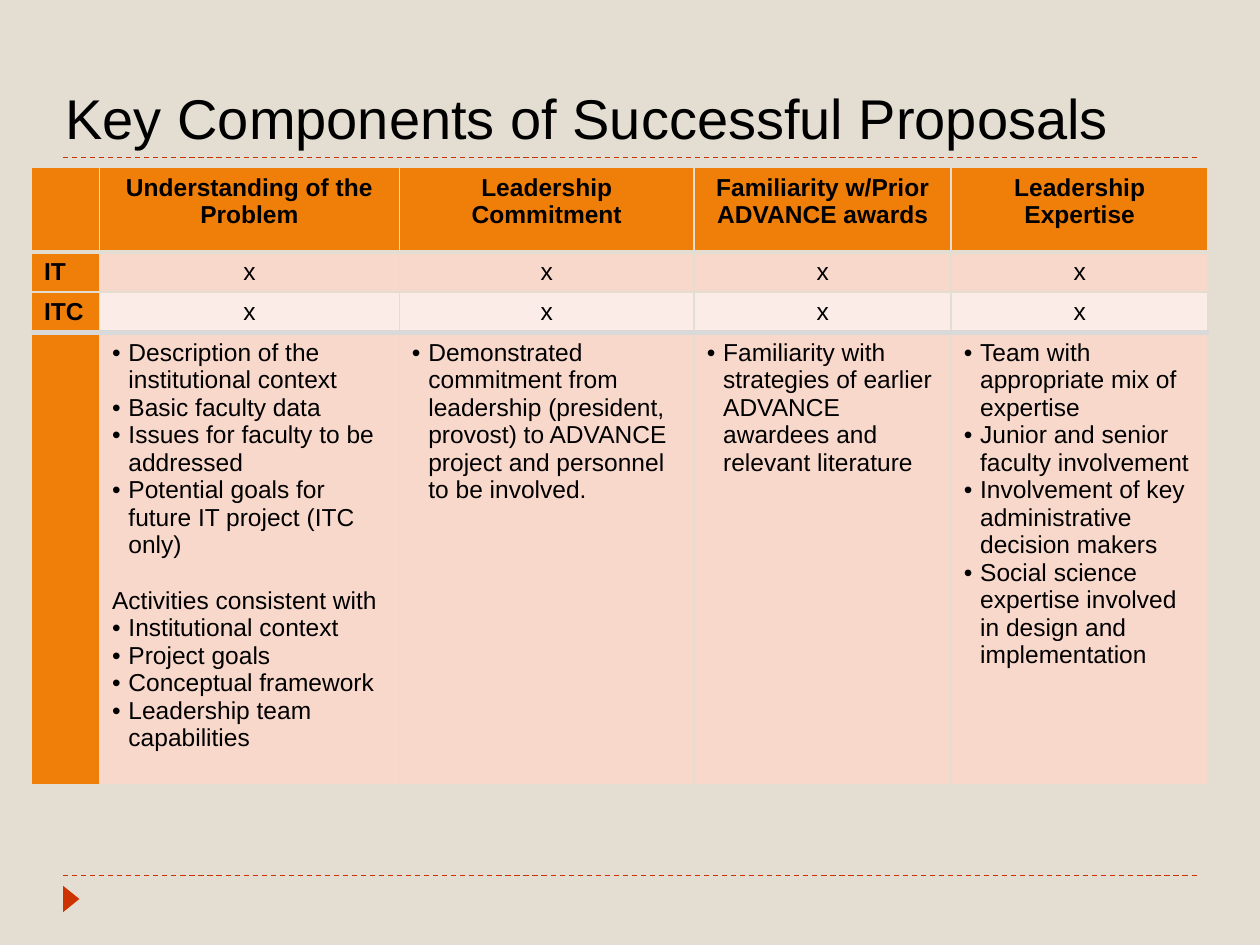
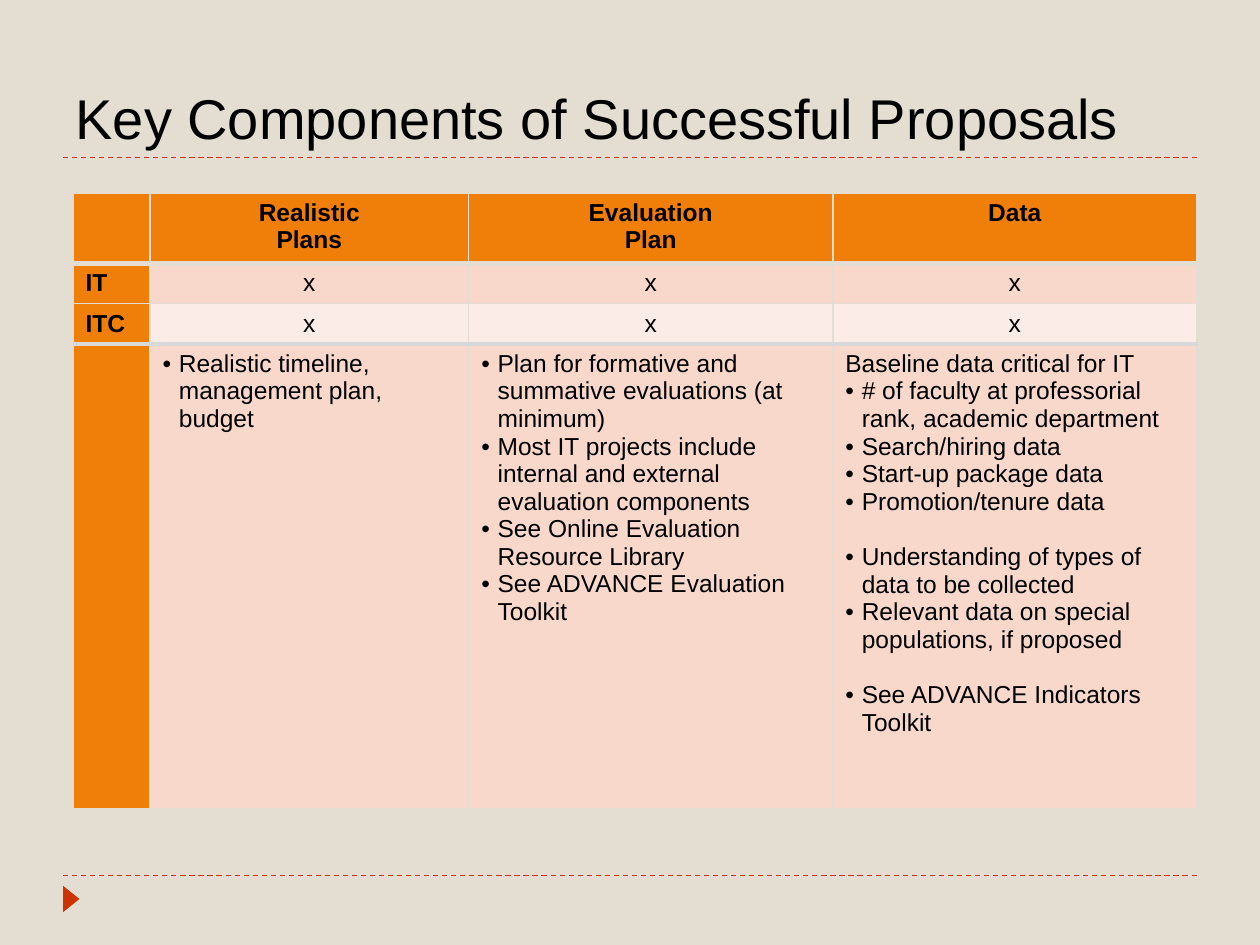
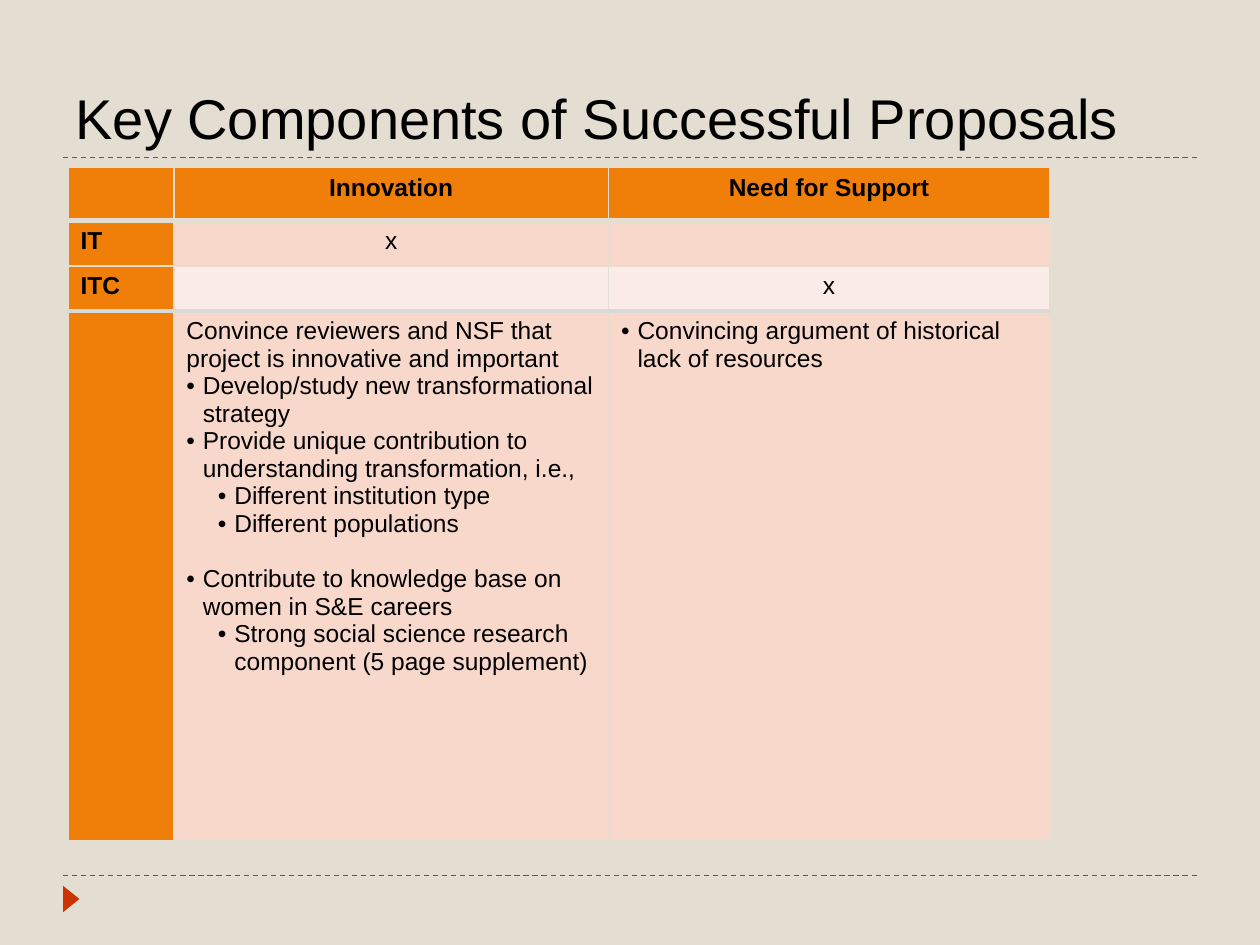
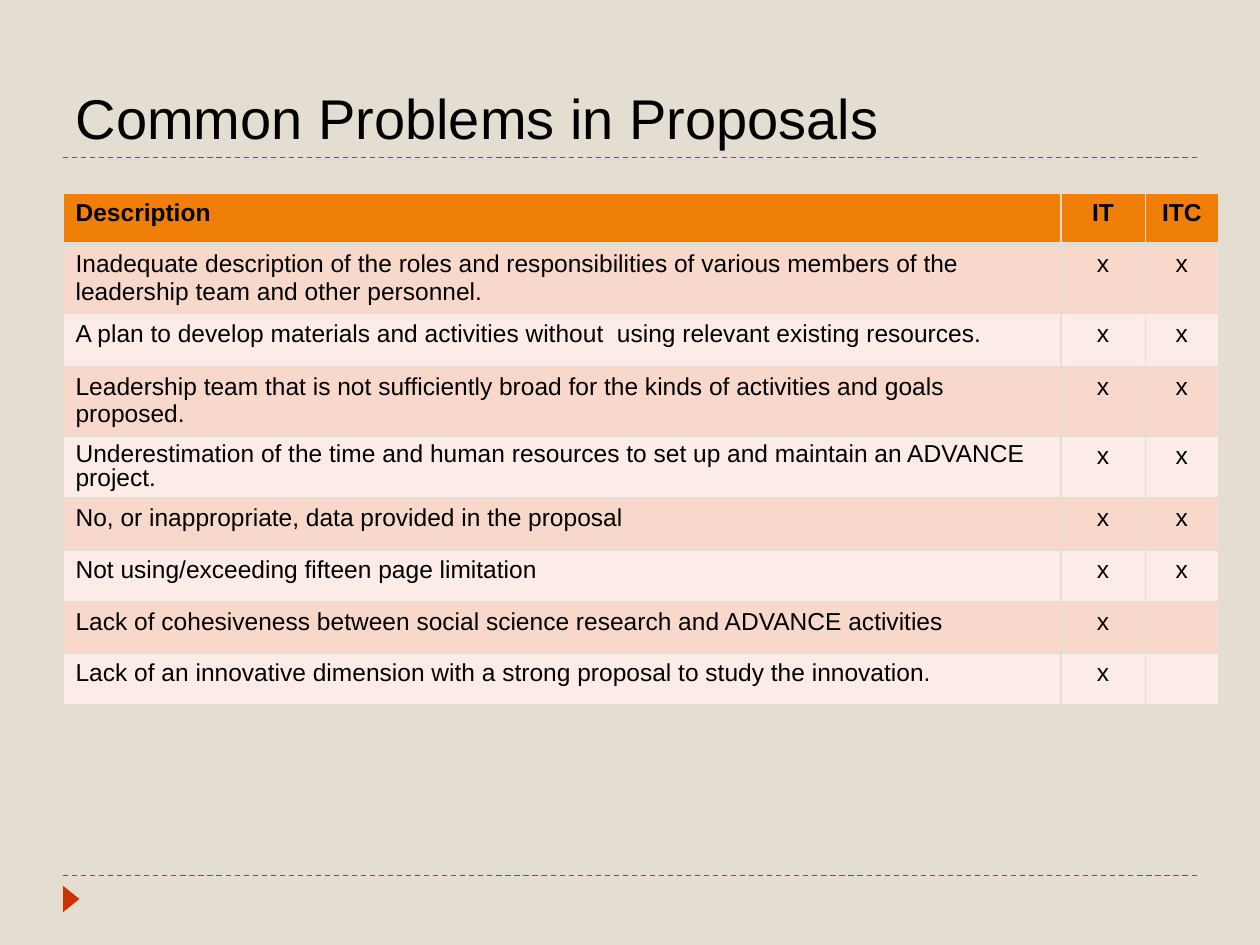
from lxml import etree
from pptx import Presentation
from pptx.dml.color import RGBColor
from pptx.enum.dml import MSO_LINE
from pptx.enum.shapes import MSO_CONNECTOR, MSO_SHAPE
from pptx.enum.text import MSO_ANCHOR, PP_ALIGN
from pptx.oxml.ns import qn
from pptx.util import Inches, Pt

DASH = MSO_LINE.DASH
STRAIGHT = MSO_CONNECTOR.STRAIGHT
TRIANGLE = MSO_SHAPE.ISOSCELES_TRIANGLE
BOTTOM = MSO_ANCHOR.BOTTOM
LEFT, CENTER = PP_ALIGN.LEFT, PP_ALIGN.CENTER

COLORS = {
    "background": "E3DED1",
    "accent": "CC3300",
    "header": "F07F09",
    "odd_row": "F9D8CC",
    "even_row": "FCECE7",
    "divider": "D9D9D9",
    "text": "000000",
}
FONT = "Arial"
TITLE_SIZE, TABLE_SIZE = 32, 14
GAP = 16
HANGING = 0.13
INDENTS = [0, 0.13, 0.38]
TITLE_BOX = (0.5, 0.17, 9, 1.08)
RULE_TOPS = (6.95, 1.25)
PLAIN, BULLET, SUB_BULLET = range(3)
COMPONENTS = "Key Components of Successful Proposals"

SLIDES = [
    {
        "title": COMPONENTS,
        "title_box": (0.42, 0.17, 9.08, 1.08),
        "origin": (0.25, 1.33),
        "columns": [0.54, 2.38, 2.34, 2.04, 2.04],
        "rows": [0.67, 0.32, 0.32, 3.59],
        "label_column": True,
        "cells": [
            ["", "Understanding of the Problem", "Leadership Commitment",
             "Familiarity w/Prior ADVANCE awards", "Leadership Expertise"],
            ["IT", "x", "x", "x", "x"],
            ["ITC", "x", "x", "x", "x"],
            ["",
             [(BULLET, "Description of the institutional context"),
              (BULLET, "Basic faculty data"),
              (BULLET, "Issues for faculty to be addressed"),
              (BULLET, "Potential goals for future IT project (ITC only)"),
              (PLAIN, "Activities consistent with", GAP),
              (BULLET, "Institutional context"),
              (BULLET, "Project goals"),
              (BULLET, "Conceptual framework"),
              (BULLET, "Leadership team capabilities")],
             [(BULLET, "Demonstrated commitment from leadership (president, "
                       "provost) to ADVANCE project and personnel to be involved.")],
             [(BULLET, "Familiarity with strategies of earlier ADVANCE "
                       "awardees and relevant literature")],
             [(BULLET, "Team with appropriate mix of expertise"),
              (BULLET, "Junior and senior faculty involvement"),
              (BULLET, "Involvement of key administrative decision makers"),
              (BULLET, "Social science expertise involved in design and "
                       "implementation")]],
        ],
    },
    {
        "title": COMPONENTS,
        "origin": (0.58, 1.53),
        "columns": [0.61, 2.53, 2.89, 2.89],
        "rows": [0.56, 0.32, 0.32, 3.69],
        "label_column": True,
        "cells": [
            ["", "Realistic\nPlans", "Evaluation\nPlan", "Data"],
            ["IT", "x", "x", "x"],
            ["ITC", "x", "x", "x"],
            ["",
             [(BULLET, "Realistic timeline, management plan, budget")],
             [(BULLET, "Plan for formative and summative evaluations (at minimum)"),
              (BULLET, "Most IT projects include internal and external "
                       "evaluation components"),
              (BULLET, "See Online Evaluation Resource Library"),
              (BULLET, "See ADVANCE Evaluation Toolkit")],
             [(PLAIN, "Baseline data critical for IT"),
              (BULLET, "# of faculty at professorial rank, academic department"),
              (BULLET, "Search/hiring data"),
              (BULLET, "Start-up package data"),
              (BULLET, "Promotion/tenure data"),
              (BULLET, "Understanding of types of data to be collected", GAP),
              (BULLET, "Relevant data on special populations, if proposed"),
              (BULLET, "See ADVANCE Indicators Toolkit", GAP)]],
        ],
    },
    {
        "title": COMPONENTS,
        "origin": (0.54, 1.33),
        "columns": [0.84, 3.45, 3.5],
        "rows": [0.42, 0.36, 0.36, 4.2],
        "label_column": True,
        "cells": [
            ["", "Innovation", "Need for Support"],
            ["IT", "x", ""],
            ["ITC", "", "x"],
            ["",
             [(PLAIN, "Convince reviewers and NSF that project is innovative "
                      "and important"),
              (BULLET, "Develop/study new transformational strategy"),
              (BULLET, "Provide unique contribution to understanding "
                       "transformation, i.e.,"),
              (SUB_BULLET, "Different institution type"),
              (SUB_BULLET, "Different populations"),
              (BULLET, "Contribute to knowledge base on women in S&E careers", GAP),
              (SUB_BULLET, "Strong social science research component "
                           "(5 page supplement)")],
             [(BULLET, "Convincing argument of historical lack of resources")]],
        ],
    },
    {
        "title": "Common Problems in Proposals",
        "origin": (0.5, 1.53),
        "columns": [7.92, 0.67, 0.58],
        "rows": [0.41, 0.55, 0.42, 0.55, 0.49] + [0.41] * 4,
        "label_column": False,
        "tight_row": 4,
        "cells": [
            ["Description", "IT", "ITC"],
            ["Inadequate description of the roles and responsibilities of various "
             "members of the leadership team and other personnel.", "x", "x"],
            ["A plan to develop materials and activities without  using relevant "
             "existing resources.", "x", "x"],
            ["Leadership team that is not sufficiently broad for the kinds of "
             "activities and goals proposed.", "x", "x"],
            ["Underestimation of the time and human resources to set up and "
             "maintain an ADVANCE project.", "x", "x"],
            ["No, or inappropriate, data provided in the proposal", "x", "x"],
            ["Not using/exceeding fifteen page limitation", "x", "x"],
            ["Lack of cohesiveness between social science research and ADVANCE "
             "activities", "x", ""],
            ["Lack of an innovative dimension with a strong proposal to study the "
             "innovation.", "x", ""],
        ],
    },
]


def rgb(name):
    return RGBColor.from_string(COLORS[name])


def place(shape, box):
    shape.left, shape.top, shape.width, shape.height = map(Inches, box)


def add_run(paragraph, text, size, bold=False):
    run = paragraph.add_run()
    run.text = text
    run.font.name = FONT
    run.font.size = Pt(size)
    run.font.bold = bold
    run.font.color.rgb = rgb("text")


def add_rule(slide, top):
    rule = slide.shapes.add_connector(
        STRAIGHT, Inches(0.5), Inches(top), Inches(9.5), Inches(top))
    rule.line.color.rgb = rgb("accent")
    rule.line.width = Pt(0.75)
    rule.line.dash_style = DASH
    etree.SubElement(rule.element.spPr, qn("a:effectLst"))
    return rule


def add_marker(slide):
    marker = slide.shapes.add_shape(TRIANGLE, *map(Inches, (0.46, 7.07, 0.21, 0.13)))
    marker.rotation = 90
    marker.shadow.inherit = False
    marker.fill.solid()
    marker.fill.fore_color.rgb = rgb("accent")
    marker.line.fill.background()
    return marker


def style_layout(presentation, layout):
    background = presentation.slide_master.background.fill
    background.solid()
    background.fore_color.rgb = rgb("background")
    title = layout.placeholders[0]
    place(title, TITLE_BOX)
    title.text_frame.vertical_anchor = BOTTOM


def move_to_layout(layout, shapes):
    for shape in shapes:
        layout.shapes.element.append(shape.element)


def set_bullet(paragraph, level):
    properties = paragraph._p.get_or_add_pPr()
    if level == PLAIN:
        etree.SubElement(properties, qn("a:buNone"))
        return
    properties.set("marL", str(Inches(INDENTS[level])))
    properties.set("indent", str(-Inches(HANGING)))
    etree.SubElement(properties, qn("a:buFont"), typeface=FONT)
    etree.SubElement(properties, qn("a:buChar"), char="•")


def set_borders(cell, top, bottom):
    thin = ("background", 1)
    properties = cell._tc.get_or_add_tcPr()
    for side, (color, width) in zip("LRTB", (thin, thin, top, bottom)):
        line = etree.SubElement(properties, qn(f"a:ln{side}"), w=str(Pt(width)))
        fill = etree.SubElement(line, qn("a:solidFill"))
        etree.SubElement(fill, qn("a:srgbClr"), val=COLORS[color])


def write_cell(cell, content, align, bold, spacing):
    if not content:
        etree.SubElement(cell.text_frame.paragraphs[0]._p, qn("a:endParaRPr"),
                         sz=str(TABLE_SIZE * 100))
        return
    if isinstance(content, str):
        content = [(PLAIN, line) for line in content.split("\n")]
    for index, (level, text, *gap) in enumerate(content):
        frame = cell.text_frame
        paragraph = frame.add_paragraph() if index else frame.paragraphs[0]
        paragraph.alignment = align
        if gap:
            paragraph.space_before = Pt(gap[0])
        if spacing:
            paragraph.line_spacing = spacing
        set_bullet(paragraph, level)
        add_run(paragraph, text, TABLE_SIZE, bold)


def add_grid(slide, data):
    columns, rows = data["columns"], data["rows"]
    labelled = data["label_column"]
    box = (*data["origin"], sum(columns), sum(rows))
    table = slide.shapes.add_table(
        len(rows), len(columns), *map(Inches, box)).table
    for column, width in zip(table.columns, columns):
        column.width = Inches(width)
    for row, height in zip(table.rows, rows):
        row.height = Inches(height)

    edges = [("background", 1)] * (len(rows) + 1)
    edges[1] = ("background", 3)
    if labelled:
        edges[3] = ("divider", 3)
    for r, contents in enumerate(data["cells"]):
        band = "odd_row" if r % 2 else "even_row"
        for c, content in enumerate(contents):
            cell = table.cell(r, c)
            heading = r == 0 or (labelled and c == 0)
            left = c == 0 or isinstance(content, list)
            tight = c == 0 and r == data.get("tight_row")
            set_borders(cell, edges[r], edges[r + 1])
            cell.fill.solid()
            cell.fill.fore_color.rgb = rgb("header" if heading else band)
            write_cell(cell, content, LEFT if left else CENTER, heading,
                       0.9 if tight else None)


def add_title(slide, data):
    title = slide.shapes.title
    if "title_box" in data:
        place(title, data["title_box"])
    paragraph = title.text_frame.paragraphs[0]
    paragraph.alignment = LEFT
    add_run(paragraph, data["title"], TITLE_SIZE)


def main():
    presentation = Presentation()
    presentation.slide_width = Inches(10)
    presentation.slide_height = Inches(7.5)
    layout = presentation.slide_layouts.get_by_name("Title Only")
    style_layout(presentation, layout)
    for number, data in enumerate(SLIDES):
        slide = presentation.slides.add_slide(layout)
        if number == 0:
            rules = [add_rule(slide, top) for top in RULE_TOPS]
            move_to_layout(layout, [*rules, add_marker(slide)])
        add_title(slide, data)
        add_grid(slide, data)
    presentation.save("out.pptx")


if __name__ == "__main__":
    main()
